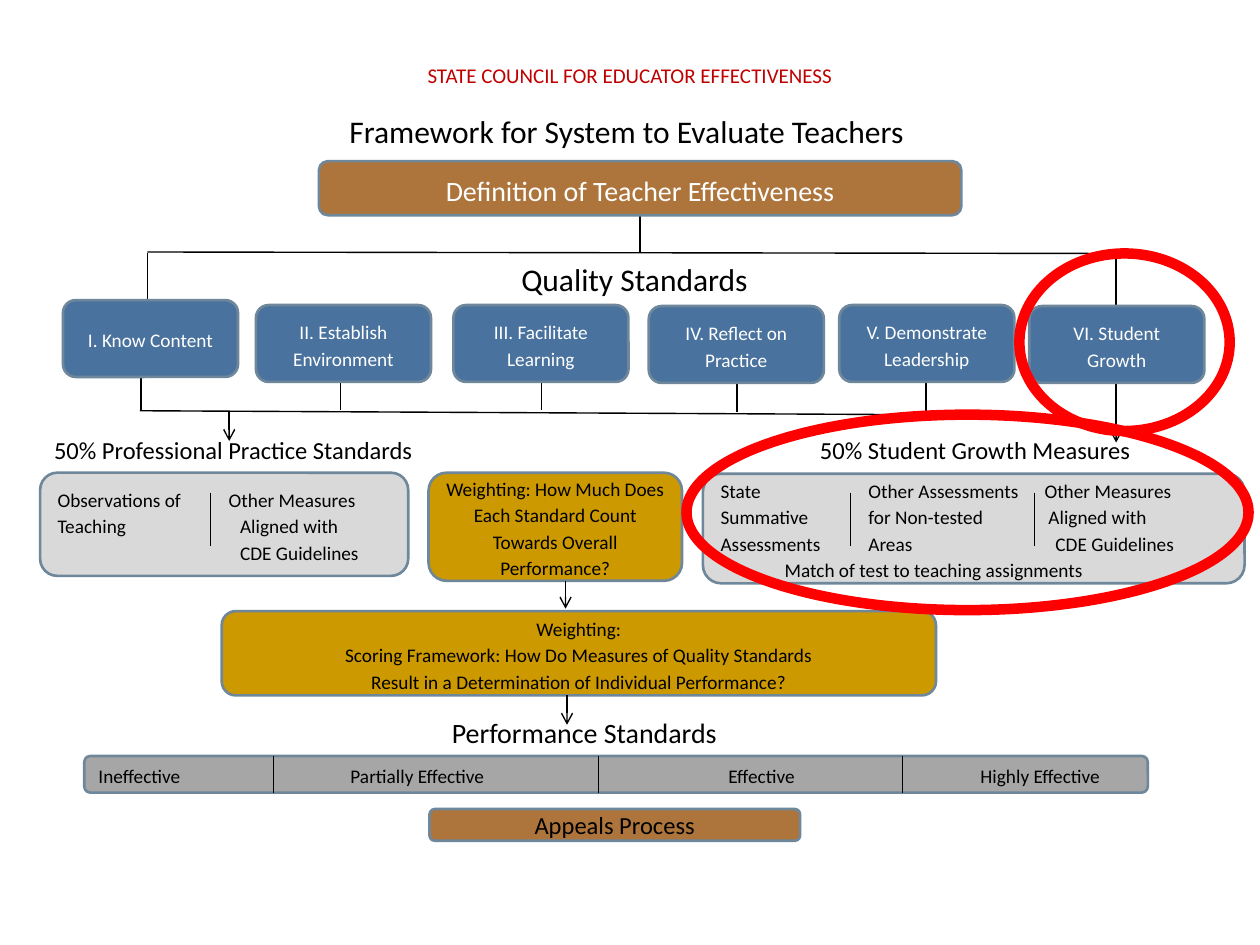
from dataclasses import dataclass
from typing import Optional

from lxml.etree import SubElement
from pptx import Presentation
from pptx.dml.color import RGBColor
from pptx.enum.shapes import MSO_CONNECTOR, MSO_SHAPE
from pptx.enum.text import MSO_ANCHOR, MSO_AUTO_SIZE, PP_ALIGN
from pptx.oxml.ns import qn
from pptx.util import Cm, Pt

COLORS = {
    "black": "000000", "white": "FFFFFF", "crimson": "C00000", "red": "FF0000",
    "brown": "AD743B", "blue": "4A729E", "gold": "CC9900",
    "light": "D9D9D9", "gray": "A6A6A6", "outline": "6E879B",
}


@dataclass
class Row:
    """One paragraph: its spans, and tab stops in cm."""
    spans: tuple
    tabs: tuple = ()


@dataclass
class Style:
    size: float = 11
    color: str = "black"
    align: PP_ALIGN = PP_ALIGN.CENTER
    spacing: float = 1.15
    after: float = 0


@dataclass
class Box:
    left: float
    top: float
    width: float
    height: float
    rows: tuple
    style: Style
    fill: Optional[str] = None
    wrap: bool = True


@dataclass
class Line:
    x1: float
    y1: float
    x2: float
    y2: float
    arrow: bool = False


def rgb(name: str) -> RGBColor:
    return RGBColor.from_string(COLORS[name])


def write_rows(frame, rows: tuple, style: Style) -> None:
    for index, row in enumerate(rows):
        para = frame.add_paragraph() if index else frame.paragraphs[0]
        para.alignment = style.align
        para.line_spacing = style.spacing
        para.space_before = Pt(0)
        para.space_after = Pt(style.after)
        if row.tabs:
            stops = SubElement(para._p.get_or_add_pPr(), qn("a:tabLst"))
            for stop in row.tabs:
                SubElement(stops, qn("a:tab"), pos=str(Cm(stop)), algn="l")
        for text, size in row.spans:
            span = para.add_run()
            span.text = text
            span.font.name = "Calibri"
            span.font.size = Pt(size or style.size)
            span.font.color.rgb = rgb(style.color)


def plain(*texts: str) -> tuple:
    return tuple(Row(((text, None),)) for text in texts)


def tabbed(text: str, *tabs: float) -> Row:
    return Row(((text, None),), tabs)


def draw_box(page, box: Box) -> None:
    """Draw a rounded box when it has a fill, otherwise a text box."""
    place = [Cm(v) for v in (box.left, box.top, box.width, box.height)]
    if box.fill:
        shape = page.shapes.add_shape(MSO_SHAPE.ROUNDED_RECTANGLE, *place)
        shape.shadow.inherit = False
        shape.fill.solid()
        shape.fill.fore_color.rgb = rgb(box.fill)
        shape.line.color.rgb = rgb("outline")
        shape.line.width = Pt(1.5)
        shape.text_frame.vertical_anchor = MSO_ANCHOR.MIDDLE
    else:
        shape = page.shapes.add_textbox(*place)
    shape.text_frame.word_wrap = box.wrap
    write_rows(shape.text_frame, box.rows, box.style)


def draw_line(page, line: Line) -> None:
    link = page.shapes.add_connector(
        MSO_CONNECTOR.STRAIGHT, Cm(line.x1), Cm(line.y1), Cm(line.x2), Cm(line.y2))
    link.line.color.rgb = rgb("black")
    link.line.width = Pt(0.79)
    if line.arrow:
        SubElement(link.line._get_or_add_ln(), qn("a:tailEnd"), type="arrow")
    SubElement(link._element.spPr, qn("a:effectLst"))


def draw_ring(page, left: float, top: float, width: float, height: float) -> None:
    ring = page.shapes.add_shape(MSO_SHAPE.OVAL, Cm(left), Cm(top), Cm(width), Cm(height))
    ring.shadow.inherit = False
    ring.fill.background()
    ring.line.color.rgb = rgb("red")
    ring.line.width = Pt(6)


def draw_title(page) -> None:
    title = page.shapes.title
    title.left, title.top, title.width, title.height = Cm(6.28), Cm(2.01), Cm(12.7), Cm(1.14)
    frame = title.text_frame
    frame.auto_size = MSO_AUTO_SIZE.NONE
    frame.vertical_anchor = MSO_ANCHOR.TOP
    write_rows(frame, plain("Framework for System to Evaluate Teachers"), Style(18))


LEFT = PP_ALIGN.LEFT
BODY = Style(align=LEFT)
STANDARDS = [
    (1.27, 6.05, "I. Know Content"), (5.16, 6.15, "II. Establish Environment"),
    (9.14, 6.15, "III. Facilitate Learning"), (13.08, 6.17, "IV. Reflect on Practice"),
    (16.92, 6.15, "V. Demonstrate Leadership"), (20.75, 6.17, "VI. Student Growth"),
]
BRANCHES = [
    Line(2.97, 5.08, 22.5, 5.11), Line(2.97, 5.11, 2.97, 6.81),
    Line(22.5, 5.08, 22.5, 6.73), Line(12.9, 4.34, 12.9, 5.11),
    Line(2.84, 7.62, 2.84, 8.28), Line(2.82, 8.28, 18.67, 8.36),
    Line(18.67, 7.7, 18.67, 8.36), Line(6.86, 7.59, 6.86, 8.26),
    Line(10.92, 7.57, 10.92, 8.26), Line(14.86, 7.65, 14.86, 8.31),
    Line(22.5, 7.62, 22.5, 8.92, True), Line(4.62, 8.31, 4.62, 8.89, True),
]
STEPS = [Line(11.4, 11.71, 11.4, 12.27, True), Line(11.43, 14.02, 11.43, 14.61, True)]
DIVIDERS = [Line(x, 9.93, x, 11) for x in (4.24, 17.15, 20.85)]
DIVIDERS += [Line(x, 15.24, x, 15.98) for x in (5.51, 12.07, 18.19)]
BOXES = [
    Box(6.35, 1.07, 12.7, 0.9, plain("STATE COUNCIL FOR EDUCATOR EFFECTIVENESS"),
        Style(12, "crimson")),
    Box(6.43, 3.25, 12.95, 1.09, plain("Definition of Teacher Effectiveness"),
        Style(16, "white", after=10), "brown"),
    Box(10.26, 5.11, 5.13, 1.02, plain("Quality Standards"),
        Style(18, align=LEFT, spacing=1), wrap=False),
    *(Box(left, top, 3.53, 1.55, plain(name), Style(color="white", after=10), "blue")
      for left, top, name in STANDARDS),
    Box(0.84, 8.51, 23.95, 1.02,
        (Row((("50% Professional Practice Standards", None), ("\t", 18),
              ("50% Student Growth Measures", None)), (15.44,)),),
        Style(14, align=LEFT, spacing=1)),
    Box(8.64, 9.53, 5.11, 2.18,
        plain("Weighting: How Much Does Each Standard Count Towards Overall Performance?"),
        Style(after=10), "gold"),
    Box(0.81, 9.53, 7.42, 2.08,
        (tabbed("Observations of\tOther Measures", 3.45),
         tabbed("Teaching\tAligned with", 3.68),
         tabbed("\tCDE Guidelines", 3.68)), BODY, "light"),
    Box(14.17, 9.55, 10.92, 2.21,
        (tabbed("State\tOther Assessments\tOther Measures", 2.98, 6.53),
         tabbed("Summative\tfor Non-tested\tAligned with", 2.98, 6.61),
         tabbed("Assessments\tAreas\tCDE Guidelines", 2.98, 6.75),
         tabbed("\tMatch of test to teaching assignments", 1.29)), BODY, "light"),
    Box(4.47, 12.32, 14.4, 1.7,
        plain("Weighting:", "Scoring Framework: How Do Measures of Quality Standards",
              "Result in a Determination of Individual Performance?"), Style(), "gold"),
    Box(8.86, 14.3, 6.53, 0.94, plain("Performance Standards"),
        Style(16, align=LEFT, spacing=1), wrap=False),
    Box(1.7, 15.24, 21.44, 0.74,
        (tabbed("Ineffective\tPartially Effective\tEffective\tHighly Effective",
                5.08, 12.7, 17.78),), Style(align=LEFT, after=10), "gray"),
    Box(8.66, 16.31, 7.47, 0.64, plain("Appeals Process"), Style(14, spacing=1), "brown"),
]


def main() -> None:
    deck = Presentation()
    deck.slide_width, deck.slide_height = Cm(25.4), Cm(19.05)
    page = deck.slides.add_slide(deck.slide_layouts[5])
    draw_title(page)
    for line in BRANCHES:
        draw_line(page, line)
    for box in BOXES:
        draw_box(page, box)
    for line in DIVIDERS + STEPS:
        draw_line(page, line)
    draw_ring(page, 20.55, 5.11, 4.24, 3.58)
    draw_ring(page, 13.84, 8.36, 11.33, 3.94)
    deck.save("out.pptx")


if __name__ == "__main__":
    main()
